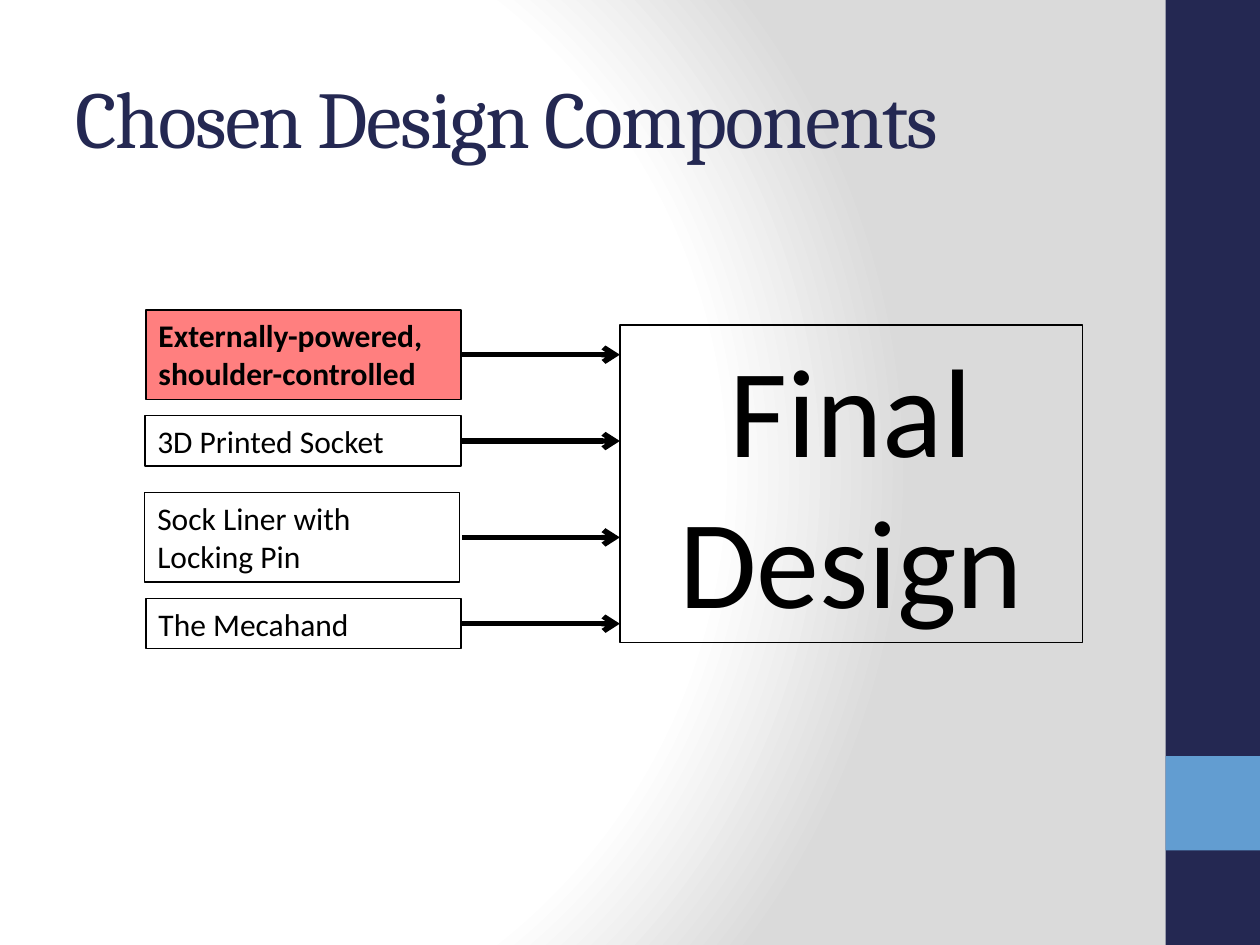
from lxml import etree
from pptx import Presentation
from pptx.dml.color import RGBColor
from pptx.enum.shapes import MSO_CONNECTOR, MSO_SHAPE
from pptx.enum.text import MSO_ANCHOR, MSO_AUTO_SIZE, PP_ALIGN
from pptx.oxml import parse_xml
from pptx.oxml.ns import nsdecls, qn
from pptx.util import Inches, Pt

RECTANGLE = MSO_SHAPE.RECTANGLE
STRAIGHT = MSO_CONNECTOR.STRAIGHT
MIDDLE = MSO_ANCHOR.MIDDLE
NO_FIT = MSO_AUTO_SIZE.NONE
GROW = MSO_AUTO_SIZE.SHAPE_TO_FIT_TEXT
LEFT, CENTER = PP_ALIGN.LEFT, PP_ALIGN.CENTER

COLORS = {
    "navy": "242852",
    "sky": "629DD1",
    "black": "000000",
    "red": "FF0000",
    "white": "FFFFFF",
    "gray": "DADADA",
}

COMPONENTS = [
    ("Externally-powered, shoulder-controlled", (1.16, 2.46, 2.5, 0.71), True),
    ("3D Printed Socket", (1.15, 3.3, 2.51, 0.4), False),
    ("Sock Liner with Locking Pin", (1.15, 3.91, 2.5, 0.71), False),
    ("The Mecahand", (1.16, 4.75, 2.5, 0.4), False),
]
FINAL_BOX = (4.92, 2.58, 3.67, 2.52)
ARROW_START = 3.67


def rgb(name):
    return RGBColor.from_string(COLORS[name])


def inches(box):
    return [Inches(value) for value in box]


def add_run(paragraph, text, font_name, size, color, bold=False):
    run = paragraph.add_run()
    run.text = text
    run.font.name = font_name
    run.font.size = Pt(size)
    run.font.bold = bold
    run.font.color.rgb = rgb(color)
    return run


def set_background(slide):
    slide.background.fill.solid()
    properties = slide.element.find(".//" + qn("p:bgPr"))
    stops = "".join(
        f'<a:gs pos="{position * 1000}"><a:srgbClr val="{COLORS[name]}"/></a:gs>'
        for position, name in ((0, "white"), (75, "white"), (100, "gray"))
    )
    gradient = parse_xml(
        f'<a:gradFill {nsdecls("a")} rotWithShape="1"><a:gsLst>{stops}</a:gsLst>'
        '<a:path path="circle"><a:fillToRect l="20000" t="50000" r="100000" b="50000"/>'
        "</a:path></a:gradFill>"
    )
    properties.replace(properties[0], gradient)


def add_sidebar(slide, box):
    left, top, width, height = box
    accent = (left, top + height * 0.8, width, width)
    for bar_box, color in ((box, "navy"), (accent, "sky")):
        bar = slide.shapes.add_shape(RECTANGLE, *inches(bar_box))
        bar.shadow.inherit = False
        bar.fill.solid()
        bar.fill.fore_color.rgb = rgb(color)
        bar.line.fill.background()


def place_title(slide, box):
    title = slide.shapes.title
    title.left, title.top, title.width, title.height = inches(box)
    frame = title.text_frame
    frame.auto_size = NO_FIT
    frame.vertical_anchor = MIDDLE
    paragraph = frame.paragraphs[0]
    paragraph.alignment = LEFT
    run = add_run(paragraph, "Chosen Design Components", "Cambria", 46, "navy")
    run.font._element.set("spc", "-100")


def add_label_box(slide, box, text, size, alignment=LEFT, highlighted=False):
    shape = slide.shapes.add_textbox(*inches(box))
    shape.line.color.rgb = rgb("black")
    shape.line.width = Pt(0.75)
    if highlighted:
        shape.fill.solid()
        shape.fill.fore_color.rgb = rgb("red")
        color = shape.element.spPr.find(qn("a:solidFill"))[0]
        etree.SubElement(color, qn("a:alpha"), val="50000")
    frame = shape.text_frame
    frame.word_wrap = True
    frame.auto_size = GROW
    paragraph = frame.paragraphs[0]
    paragraph.alignment = alignment
    add_run(paragraph, text, "Calibri", size, "black", highlighted)


def add_arrow(slide, start, end, height):
    arrow = slide.shapes.add_connector(STRAIGHT, *inches((start, height, end, height)))
    arrow.line.color.rgb = rgb("black")
    arrow.line.width = Pt(3)
    etree.SubElement(arrow.line._get_or_add_ln(), qn("a:tailEnd"), type="arrow")
    etree.SubElement(arrow.element.spPr, qn("a:effectLst"))


def add_components(slide, final_box):
    add_label_box(slide, final_box, "Final Design", 72, CENTER)
    for text, box, highlighted in COMPONENTS:
        add_label_box(slide, box, text, 18, LEFT, highlighted)
        center = box[1] + box[3] / 2
        add_arrow(slide, ARROW_START, final_box[0], center)


def main():
    presentation = Presentation()
    presentation.slide_width = Inches(10)
    presentation.slide_height = Inches(7.5)
    slide = presentation.slides.add_slide(presentation.slide_layouts[5])
    set_background(slide)
    add_sidebar(slide, (9.25, 0, 0.75, 7.5))
    place_title(slide, (0.5, 0.3, 8.33, 1.25))
    add_components(slide, FINAL_BOX)
    presentation.save("out.pptx")


if __name__ == "__main__":
    main()
